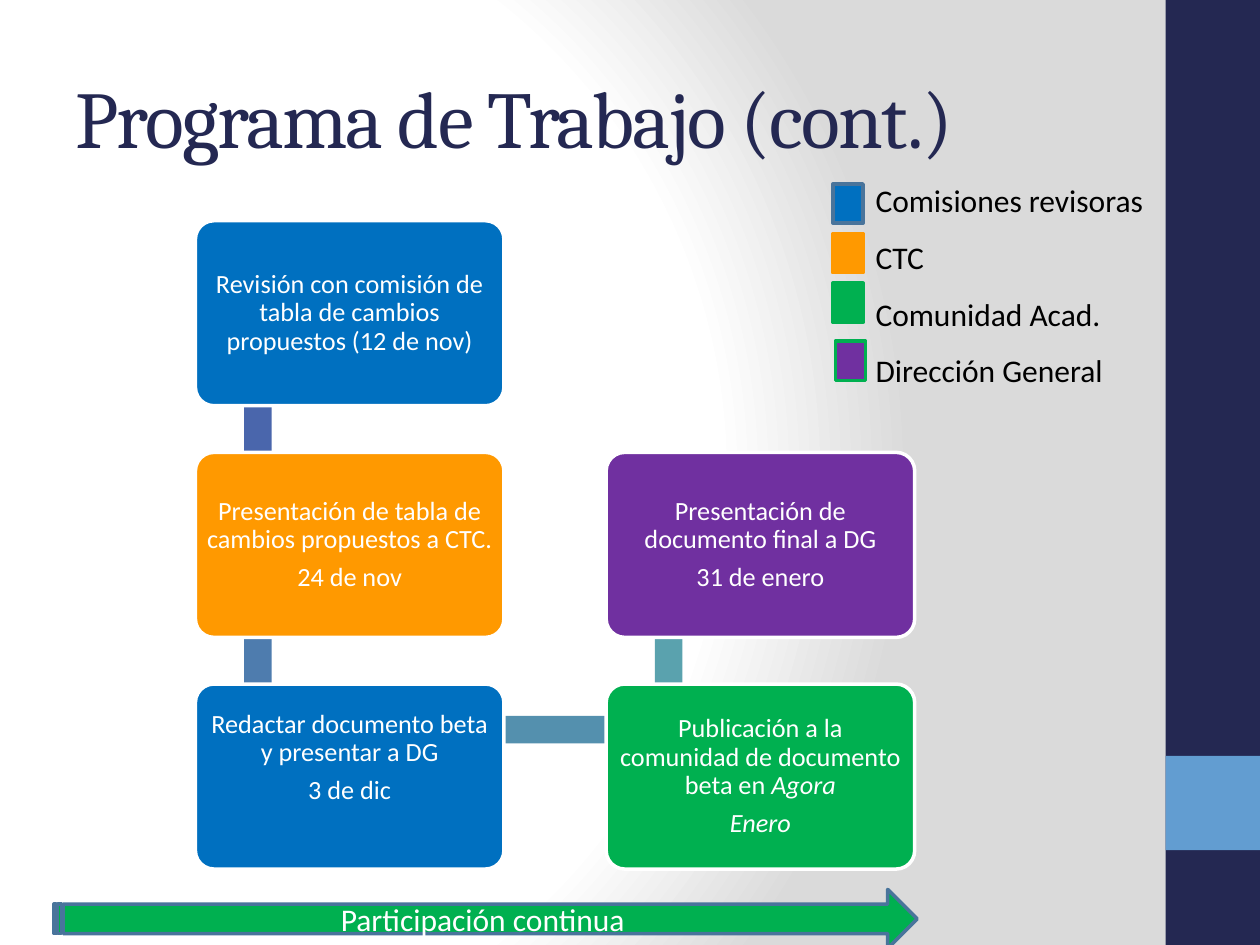
from lxml import etree
from pptx import Presentation
from pptx.dml.color import RGBColor
from pptx.enum.shapes import MSO_SHAPE
from pptx.enum.text import MSO_ANCHOR, PP_ALIGN
from pptx.oxml import parse_xml
from pptx.oxml.ns import nsdecls
from pptx.util import Cm, Pt

NAVY, SKY, WHITE, BLACK = "242852", "629DD1", "FFFFFF", "000000"
BLUE, ORANGE, GREEN, PURPLE = "0070C0", "FF9900", "00B050", "7030A0"
STEEL = "49749B"

BOX_W, BOX_H = 6.22, 3.73
COLUMNS = (3.94, 12.22)
ROW_TOP, ROW_STEP = 4.45, 4.67
LINK = 0.56  # thickness of the bars between steps
LINK_INSET = 1.26  # from a step's corner to the middle of a bar

# column, row, colour, extra bottom margin, paragraphs of (text, italic) runs
STEPS = [
    (0, 0, BLUE, 0,
     [[("Revisión con comisión de tabla de cambios propuestos (12 de nov)", False)]]),
    (0, 1, ORANGE, 0,
     [[("Presentación de tabla de cambios propuestos a CTC.", False)],
      [("24 de nov", False)]]),
    (0, 2, BLUE, 0.76,
     [[("Redactar documento beta y presentar a DG", False)],
      [("3 de dic", False)]]),
    (1, 2, GREEN, 0,
     [[("Publicación a la comunidad de documento beta en ", False), ("Agora", True)],
      [("Enero", True)]]),
    (1, 1, PURPLE, 0,
     [[("Presentación de documento final a DG", False)],
      [("31 de enero", False)]]),
]

# column, row of the upper step, colour
VERTICAL_LINKS = [(0, 0, "4A66AC"), (0, 1, "4E7CAE"), (1, 1, "5AA2AE")]

# left, top, fill, outline
LEGEND_KEYS = [
    (16.79, 3.71, BLUE, STEEL),
    (16.79, 4.71, ORANGE, ORANGE),
    (16.79, 5.71, GREEN, GREEN),
    (16.84, 6.88, PURPLE, GREEN),
]
LEGEND_LABELS = ["Comisiones revisoras", "CTC", "Comunidad Acad.", "Dirección General"]


def rgb(hex_color):
    return RGBColor.from_string(hex_color)


def row_top(row):
    return ROW_TOP + row * ROW_STEP


def set_background(slide):
    """White glow on the left that fades to grey on the right."""
    stops = "".join(
        f'<a:gs pos="{position}"><a:srgbClr val="{color}"/></a:gs>'
        for position, color in ((0, WHITE), (75000, WHITE), (100000, "DADADA")))
    background = parse_xml(
        f'<p:bg {nsdecls("p", "a")}><p:bgPr><a:gradFill rotWithShape="1">'
        f'<a:gsLst>{stops}</a:gsLst><a:path path="circle">'
        '<a:fillToRect l="20000" t="50000" r="100000" b="50000"/></a:path>'
        '</a:gradFill><a:effectLst/></p:bgPr></p:bg>')
    slide.element.cSld.insert(0, background)


def add_block(slide, preset, left, top, width, height, fill, outline=None):
    block = slide.shapes.add_shape(preset, Cm(left), Cm(top), Cm(width), Cm(height))
    block.shadow.inherit = False
    block.fill.solid()
    block.fill.fore_color.rgb = rgb(fill)
    if outline:
        block.line.color.rgb = rgb(outline)
        block.line.width = Pt(2)
    else:
        block.line.fill.background()
    return block


def add_run(paragraph, text, size, color, face="Calibri", italic=None):
    run = paragraph.add_run()
    run.text = text
    run.font.size = Pt(size)
    run.font.name = face
    run.font.color.rgb = rgb(color)
    run.font.italic = italic
    return run


def next_paragraph(frame, index):
    return frame.add_paragraph() if index else frame.paragraphs[0]


def add_title(slide, text):
    title = slide.shapes.add_textbox(Cm(1.27), Cm(0.76), Cm(21.16), Cm(3.18))
    frame = title.text_frame
    frame.word_wrap = True
    frame.vertical_anchor = MSO_ANCHOR.MIDDLE
    run = add_run(frame.paragraphs[0], text, 46, NAVY, "Cambria")
    run.font._element.set("spc", "-100")


def add_step(slide, column, row, color, extra_bottom, paragraphs):
    step = add_block(slide, MSO_SHAPE.ROUNDED_RECTANGLE, COLUMNS[column],
                     row_top(row), BOX_W, BOX_H, color, WHITE)
    step.adjustments[0] = 0.1
    frame = step.text_frame
    frame.word_wrap = True
    frame.vertical_anchor = MSO_ANCHOR.MIDDLE
    frame.margin_left = frame.margin_right = Cm(0.1)
    frame.margin_top = Cm(0.15)
    frame.margin_bottom = Cm(0.15 + extra_bottom)
    for index, runs in enumerate(paragraphs):
        paragraph = next_paragraph(frame, index)
        paragraph.alignment = PP_ALIGN.CENTER
        paragraph.line_spacing = 0.9
        paragraph.space_after = Pt(5.25)
        for text, italic in runs:
            add_run(paragraph, text, 15, WHITE, italic=italic)


def add_links(slide):
    """Bars from step to step, reaching behind the boxes."""
    for column, row, color in VERTICAL_LINKS:
        add_block(slide, MSO_SHAPE.RECTANGLE,
                  COLUMNS[column] + LINK_INSET - LINK / 2,
                  row_top(row) + 0.92, LINK, 4.65, color)
    add_block(slide, MSO_SHAPE.RECTANGLE, COLUMNS[0] + LINK_INSET,
              row_top(2) + 0.64, 8.26, LINK, "5490AE")


def add_legend(slide):
    for left, top, fill, outline in LEGEND_KEYS:
        add_block(slide, MSO_SHAPE.RECTANGLE, left, top, 0.61, 0.79, fill, outline)
    labels = slide.shapes.add_textbox(Cm(17.4), Cm(3.53), Cm(5.97), Cm(5.26))
    frame = labels.text_frame
    frame.word_wrap = False
    for index, label in enumerate(LEGEND_LABELS):
        paragraph = next_paragraph(frame, index)
        if index:
            paragraph.line_spacing = 1.5
        add_run(paragraph, label, 18, BLACK)


def add_timeline_arrow(slide, text):
    arrow = add_block(slide, MSO_SHAPE.STRIPED_RIGHT_ARROW,
                      1.09, 17.93, 17.4, 1.19, GREEN, STEEL)
    frame = arrow.text_frame
    frame.vertical_anchor = MSO_ANCHOR.MIDDLE
    frame.paragraphs[0].alignment = PP_ALIGN.CENTER
    add_run(frame.paragraphs[0], text, 18, WHITE)


def main():
    deck = Presentation()
    deck.slide_width, deck.slide_height = Cm(25.4), Cm(19.05)
    slide = deck.slides.add_slide(deck.slide_layouts[6])
    set_background(slide)
    add_block(slide, MSO_SHAPE.RECTANGLE, 23.5, 0, 1.9, 19.05, NAVY)
    add_block(slide, MSO_SHAPE.RECTANGLE, 23.5, 15.24, 1.9, 1.9, SKY)
    add_title(slide, "Programa de Trabajo (cont.)")
    add_links(slide)
    for step in STEPS:
        add_step(slide, *step)
    add_legend(slide)
    add_timeline_arrow(slide, "Participación continua")
    deck.save("out.pptx")


if __name__ == "__main__":
    main()
